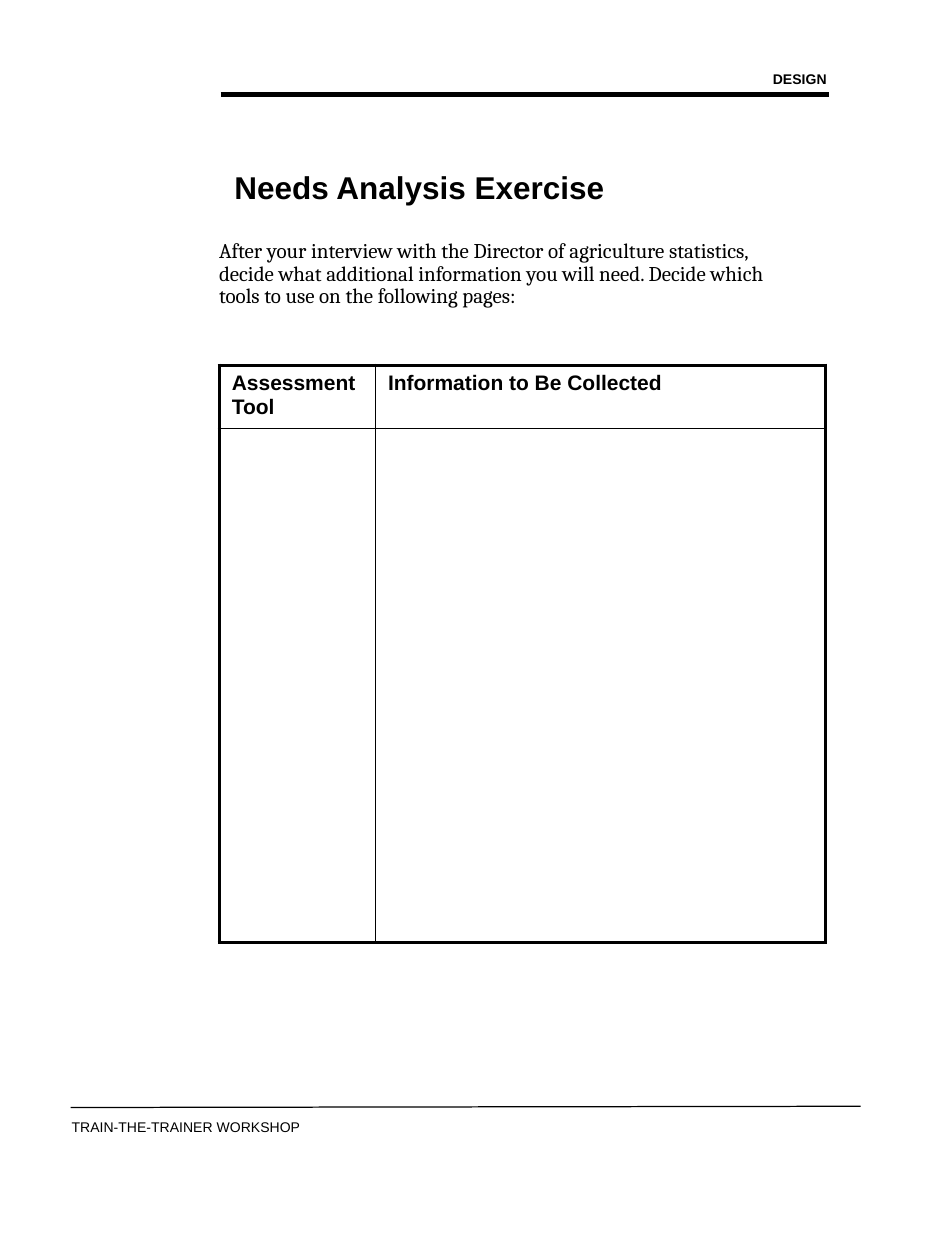
from lxml import etree
from pptx import Presentation
from pptx.dml.color import RGBColor
from pptx.enum.shapes import MSO_CONNECTOR as CONN
from pptx.enum.text import MSO_ANCHOR as ANCHOR, MSO_AUTO_SIZE as AUTO, PP_ALIGN as ALIGN
from pptx.oxml.ns import qn
from pptx.util import Inches, Pt

COLORS = {"ink": "000000"}
TITLE = "Needs Analysis Exercise"
INTRO = ("After your interview with the Director of agriculture statistics, "
         "decide what additional information you will need. "
         "Decide which tools to use on the following pages:")
HEADERS = ["Assessment Tool", "Information to Be Collected"]
COL_WIDTHS = [1.24, 3.57]
ROW_HEIGHTS = [0.5, 4.08]
RULES = [((0.56, 8.79), (6.83, 8.78), 0.7), ((1.75, 0.75), (6.58, 0.75), 3)]
LABELS = [
    ("TRAIN-THE-TRAINER WORKSHOP", (0.47, 8.83, 3.5, 0.23), dict(size=8)),
    (INTRO, (1.64, 1.86, 4.83, 0.93), dict(size=12, font="Cambria", spacing=0.9)),
    ("DESIGN", (4.08, 0.51, 2.58, 0.23), dict(size=8, bold=True, align=ALIGN.RIGHT)),
]
OUTER, INNER = 2.25, 1


def write(tf, text, size=12, font="Arial", bold=False, align=ALIGN.LEFT, spacing=1.0):
    tf.word_wrap = True
    p = tf.paragraphs[0]
    p.alignment = align
    p.line_spacing = spacing
    r = p.add_run()
    r.text = text
    r.font.size = Pt(size)
    r.font.name = font
    r.font.bold = bold
    r.font.color.rgb = RGBColor.from_string(COLORS["ink"])


def set_borders(cell, widths):
    tc_pr = cell._tc.get_or_add_tcPr()
    for i, (side, width) in enumerate(widths.items()):
        ln = etree.Element(qn("a:ln" + side), w=str(Pt(width)))
        fill = etree.SubElement(ln, qn("a:solidFill"))
        etree.SubElement(fill, qn("a:srgbClr"), val=COLORS["ink"])
        tc_pr.insert(i, ln)


prs = Presentation()
prs.slide_width, prs.slide_height = Inches(7.5), Inches(10)
s = prs.slides.add_slide(prs.slide_layouts[5])

title = s.shapes.title
title.left, title.top, title.width, title.height = map(Inches, (1.76, 1.44, 4.67, 0.08))
tf = title.text_frame
tf.auto_size = AUTO.NONE
tf.vertical_anchor = ANCHOR.MIDDLE
tf.margin_top = tf.margin_bottom = 0
write(tf, TITLE, size=18, bold=True)

for start, end, width in RULES:
    line = s.shapes.add_connector(CONN.STRAIGHT, *map(Inches, start + end))
    line.line.width = Pt(width)
    line.line.color.rgb = RGBColor.from_string(COLORS["ink"])
    etree.SubElement(line._element.spPr, qn("a:effectLst"))

for text, box, fmt in LABELS:
    sp = s.shapes.add_textbox(*map(Inches, box))
    write(sp.text_frame, text, **fmt)

rows, cols = len(ROW_HEIGHTS), len(COL_WIDTHS)
table = s.shapes.add_table(rows, cols, Inches(1.74), Inches(2.9),
                           Inches(sum(COL_WIDTHS)), Inches(sum(ROW_HEIGHTS))).table
table.first_row = table.horz_banding = False
for col, width in zip(table.columns, COL_WIDTHS):
    col.width = Inches(width)
for row, height in zip(table.rows, ROW_HEIGHTS):
    row.height = Inches(height)
for i in range(rows):
    for j in range(cols):
        cell = table.cell(i, j)
        cell.fill.background()
        set_borders(cell, {
            "L": OUTER if j == 0 else INNER,
            "R": OUTER if j == cols - 1 else INNER,
            "T": OUTER if i == 0 else INNER,
            "B": OUTER if i == rows - 1 else INNER,
        })
for j, text in enumerate(HEADERS):
    write(table.cell(0, j).text_frame, text, bold=True)

prs.save("out.pptx")
